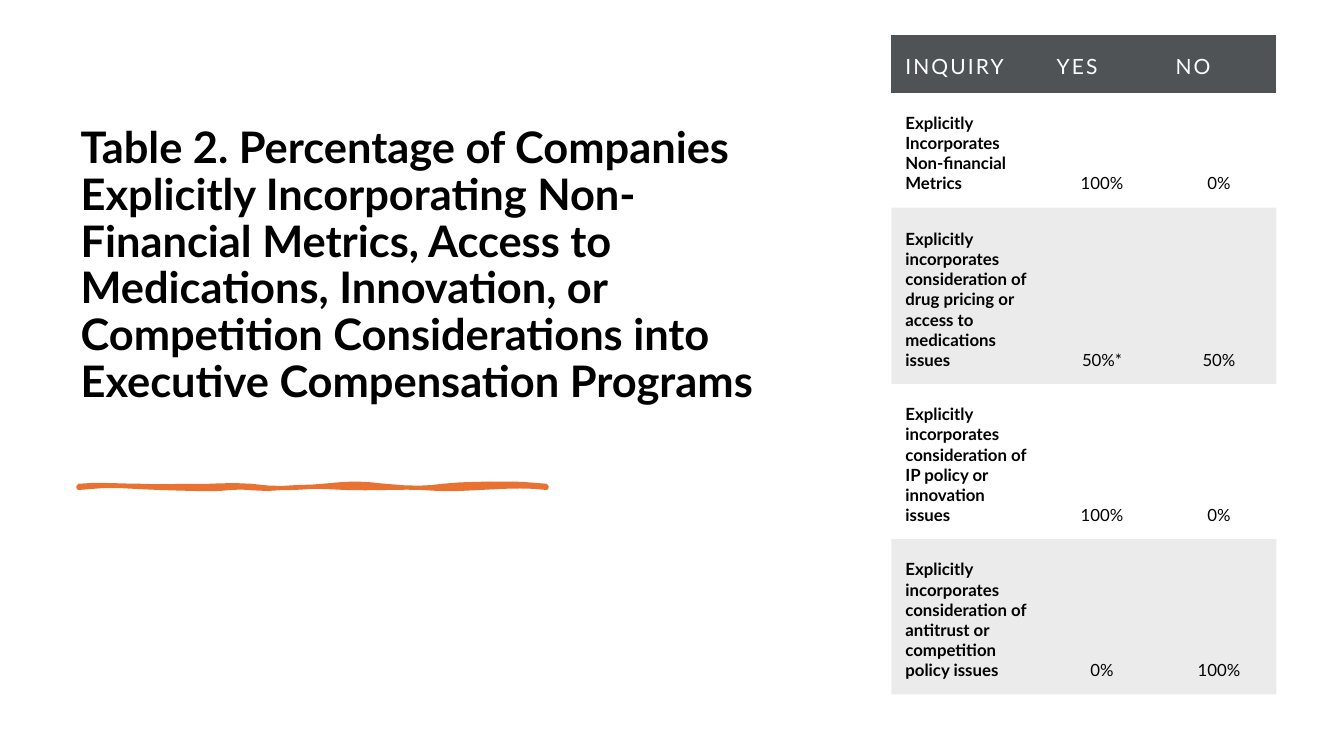
from pptx import Presentation
from pptx.dml.color import RGBColor
from pptx.enum.text import MSO_ANCHOR, MSO_AUTO_SIZE, PP_ALIGN
from pptx.oxml.ns import qn
from pptx.util import Inches, Pt
from lxml import etree

BOTTOM, NO_AUTOFIT = MSO_ANCHOR.BOTTOM, MSO_AUTO_SIZE.NONE
LEFT, CENTER = PP_ALIGN.LEFT, PP_ALIGN.CENTER

BLACK = RGBColor(0x00, 0x00, 0x00)
WHITE = RGBColor(0xFF, 0xFF, 0xFF)
SLATE = RGBColor(0x50, 0x53, 0x56)
ORANGE = RGBColor(0xE9, 0x71, 0x32)

FONT = "Lato"
NO_STYLE = "{2D5ABB26-0587-4C30-8999-92F81FD0307C}"
BAND_OPACITY = 8
LETTER_SPACING = 1.5

TITLE = (
    "Table 2. Percentage of Companies Explicitly Incorporating Non-Financial "
    "Metrics, Access to Medications, Innovation, or Competition Considerations "
    "into Executive Compensation Programs"
)
COLUMN_WIDTHS = (1.5, 1.18, 1.14)
ROW_HEIGHTS = (0.57, 1.14, 1.75, 1.54, 1.54)
ROWS = (
    ("INQUIRY", "YES", "NO"),
    ("Explicitly Incorporates Non-financial Metrics", "100%", "0%"),
    ("Explicitly incorporates consideration of drug pricing or access to "
     "medications issues", "50%*", "50%"),
    ("Explicitly incorporates consideration of IP policy or innovation issues",
     "100%", "0%"),
    ("Explicitly incorporates consideration of antitrust or competition policy "
     "issues", "0%", "100%"),
)

STROKE_START = (0.78, 4.82)
# Each curve: first control point, second control point, end point.
STROKE_CURVES = (
    ((0.95, 4.8), (1.2, 4.82), (1.4, 4.82)),
    ((1.6, 4.83), (1.77, 4.82), (1.92, 4.82)),
    ((2.07, 4.83), (2.27, 4.8), (2.49, 4.82)),
    ((2.72, 4.85), (2.87, 4.85), (3.2, 4.82)),
    ((3.53, 4.79), (3.53, 4.79), (3.82, 4.82)),
    ((4.1, 4.85), (4.26, 4.84), (4.39, 4.82)),
    ((4.52, 4.8), (5.17, 4.78), (5.42, 4.82)),
    ((5.42, 4.83), (5.42, 4.83), (5.42, 4.84)),
    ((5.28, 4.82), (5.08, 4.82), (4.76, 4.84)),
    ((4.44, 4.86), (4.34, 4.85), (4.19, 4.84)),
    ((4.04, 4.83), (3.65, 4.85), (3.43, 4.84)),
    ((3.22, 4.83), (3.07, 4.82), (2.82, 4.84)),
    ((2.57, 4.87), (2.42, 4.82), (2.29, 4.84)),
    ((2.16, 4.86), (1.92, 4.85), (1.58, 4.84)),
    ((1.24, 4.83), (1.15, 4.8), (0.78, 4.84)),
)
STEPS_PER_CURVE = 4


def format_font(font, size, color, bold):
    font.name = FONT
    font.size = Pt(size)
    font.bold = bold
    font.color.rgb = color


def add_title(slide):
    title = slide.shapes.title
    title.left, title.top = Inches(0.7), Inches(0.35)
    title.width, title.height = Inches(7.32), Inches(4.26)
    text_frame = title.text_frame
    text_frame.text = TITLE
    text_frame.word_wrap = True
    text_frame.auto_size = NO_AUTOFIT
    text_frame.vertical_anchor = BOTTOM
    text_frame.margin_bottom = Inches(0.57)
    paragraph = text_frame.paragraphs[0]
    paragraph.alignment = LEFT
    paragraph.line_spacing = 0.9
    format_font(paragraph.runs[0].font, 31, BLACK, True)


def curve_point(start, control_1, control_2, end, t):
    """Return the point at t (0 to 1) on a cubic curve, in EMU."""
    u = 1 - t
    return tuple(
        Inches(u**3 * a + 3 * u**2 * t * b + 3 * u * t**2 * c + t**3 * d)
        for a, b, c, d in zip(start, control_1, control_2, end)
    )


def add_brush_stroke(slide):
    points = []
    start = STROKE_START
    for control_1, control_2, end in STROKE_CURVES:
        for step in range(1, STEPS_PER_CURVE + 1):
            points.append(curve_point(start, control_1, control_2, end,
                                      step / STEPS_PER_CURVE))
        start = end
    left, top = STROKE_START
    builder = slide.shapes.build_freeform(Inches(left), Inches(top))
    builder.add_line_segments(points, close=True)
    stroke = builder.convert_to_shape()
    stroke.shadow.inherit = False
    stroke.fill.solid()
    stroke.fill.fore_color.rgb = ORANGE
    stroke.line.color.rgb = ORANGE
    stroke.line.width = Pt(3)


def fill_cell(cell, color, opacity=100):
    cell.fill.solid()
    cell.fill.fore_color.rgb = color
    if opacity < 100:
        color_element = cell._tc.tcPr.find(".//" + qn("a:srgbClr"))
        alpha = etree.SubElement(color_element, qn("a:alpha"))
        alpha.set("val", str(opacity * 1000))


def format_cell(cell, row, column):
    cell.vertical_anchor = BOTTOM
    cell.margin_left = cell.margin_right = Inches(0.14)
    cell.margin_top = cell.margin_bottom = Inches(0.14)
    paragraph = cell.text_frame.paragraphs[0]
    run = paragraph.runs[0]
    if row == 0:
        format_font(run.font, 15, WHITE, False)
        run.font._element.set("spc", str(int(LETTER_SPACING * 100)))
        fill_cell(cell, SLATE)
        return
    paragraph.alignment = CENTER if column else LEFT
    format_font(run.font, 12, BLACK, column == 0)
    if row % 2 == 0:
        fill_cell(cell, BLACK, BAND_OPACITY)
    else:
        cell.fill.background()


def add_inquiry_table(slide):
    frame = slide.shapes.add_table(
        len(ROWS), len(COLUMN_WIDTHS), Inches(8.84), Inches(0.35),
        Inches(sum(COLUMN_WIDTHS)), Inches(sum(ROW_HEIGHTS)))
    table = frame.table
    table.horz_banding = False
    table._tbl.tblPr.find(qn("a:tableStyleId")).text = NO_STYLE
    for column, width in zip(table.columns, COLUMN_WIDTHS):
        column.width = Inches(width)
    for row, height in zip(table.rows, ROW_HEIGHTS):
        row.height = Inches(height)
    for row, texts in enumerate(ROWS):
        for column, text in enumerate(texts):
            cell = table.cell(row, column)
            cell.text_frame.text = text
            format_cell(cell, row, column)


def main():
    presentation = Presentation()
    presentation.slide_width = Inches(13.33)
    presentation.slide_height = Inches(7.5)
    title_only = presentation.slide_layouts[5]
    slide = presentation.slides.add_slide(title_only)
    add_title(slide)
    add_brush_stroke(slide)
    add_inquiry_table(slide)
    presentation.save("out.pptx")


if __name__ == "__main__":
    main()
